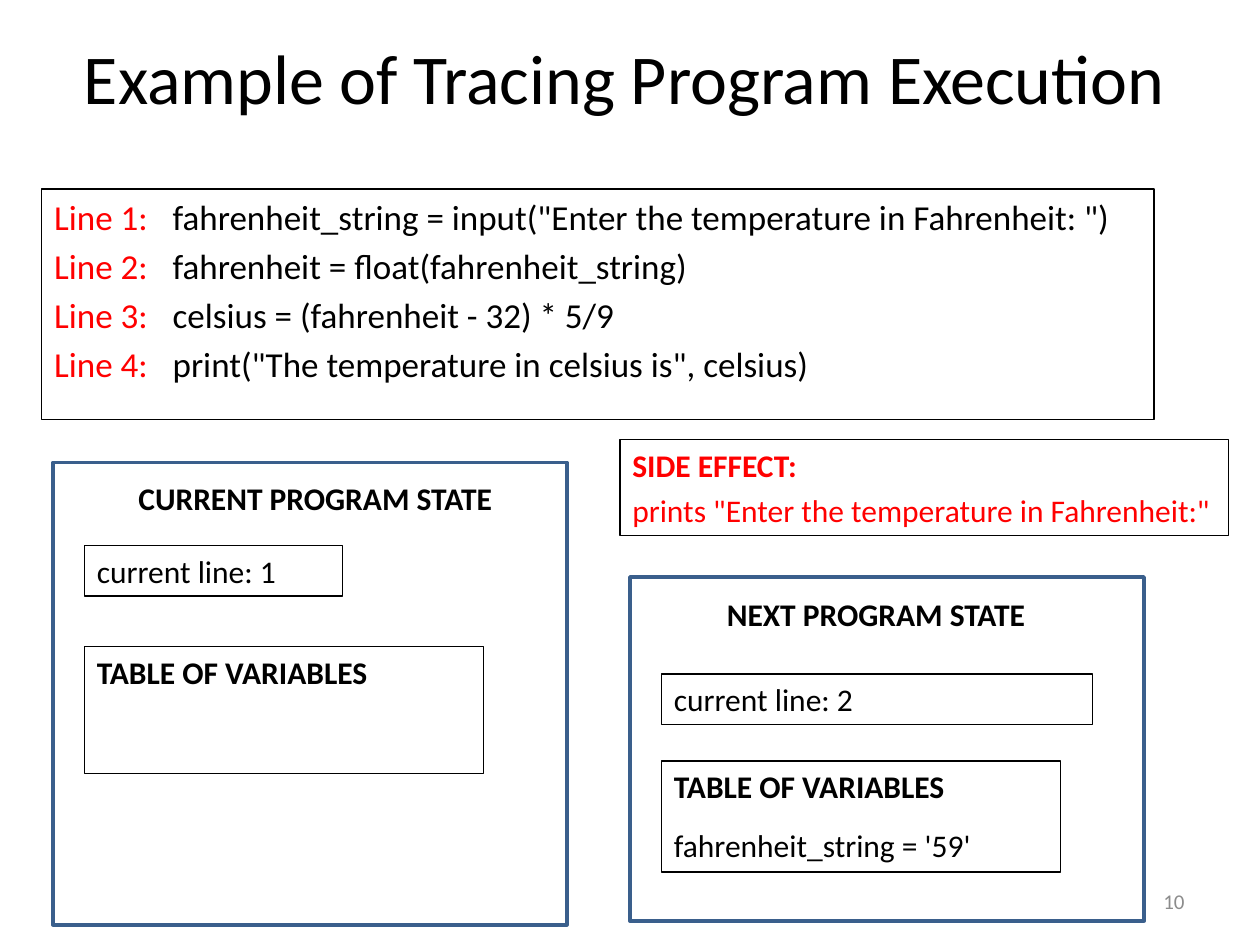
from lxml.etree import SubElement
from pptx import Presentation
from pptx.dml.color import RGBColor
from pptx.enum.shapes import MSO_SHAPE
from pptx.enum.text import MSO_ANCHOR, MSO_AUTO_SIZE, PP_ALIGN
from pptx.oxml.ns import qn
from pptx.util import Inches, Pt

THEME = {
    "font": "Calibri",
    "black": RGBColor(0, 0, 0),
    "red": RGBColor(255, 0, 0),
    "gray": RGBColor(0x8C, 0x8C, 0x8C),
    "frame": RGBColor(0x3A, 0x5F, 0x8C),
    "title": 40, "code": 20, "label": 18, "number": 12,
    "thin": 0.75, "thick": 2,
}

TITLE = ("Example of Tracing Program Execution", (0.08, 0.17, 9.75, 0.88))
SLIDE_NUMBER = ("10", (7.17, 6.95, 2.33, 0.4))
CODE_BOX = (0.33, 1.5, 8.83, 1.83)
CODE_INDENT = 0.94
CODE = [
    'fahrenheit_string = input("Enter the temperature in Fahrenheit: ")',
    "fahrenheit = float(fahrenheit_string)",
    "celsius = (fahrenheit - 32) * 5/9",
    'print("The temperature in celsius is", celsius)',
]
SIDE_EFFECT = {
    "box": (4.92, 3.49, 4.83, 0.76),
    "lines": ["SIDE EFFECT:", 'prints "Enter the temperature in Fahrenheit:"'],
    "gap": 4,
}
STATES = [
    {
        "frame": (0.42, 3.67, 4.08, 3.67),
        "heading": ("CURRENT PROGRAM STATE", (1, 3.75, 3.17, 0.4)),
        "current": ("current line: 1", (0.67, 4.33, 2.05, 0.4)),
        "variables": (["TABLE OF VARIABLES"], (0.67, 5.13, 3.17, 1.01)),
    },
    {
        "frame": (5, 4.58, 4.08, 2.73),
        "heading": ("NEXT PROGRAM STATE", (5.67, 4.67, 3.17, 0.4)),
        "current": ("current line: 2", (5.25, 5.35, 3.42, 0.4)),
        "variables": (["TABLE OF VARIABLES", "fahrenheit_string = '59'"],
                      (5.25, 6.04, 3.17, 0.88)),
    },
]
VARIABLES_GAP = 12


def place(shape, box):
    shape.left, shape.top, shape.width, shape.height = map(Inches, box)


def set_font(font, size, color, bold=False):
    font.name = THEME["font"]
    font.size = Pt(size)
    font.color.rgb = color
    font.bold = bold


def outline(shape, color, width):
    shape.line.color.rgb = color
    shape.line.width = Pt(width)


def add_box(shapes, box, color=THEME["black"], width=THEME["thin"]):
    """Add an unfilled, outlined rectangle."""
    shape = shapes.add_shape(MSO_SHAPE.RECTANGLE, *map(Inches, box))
    shape.shadow.inherit = False
    shape.fill.background()
    outline(shape, color, width)
    return shape


def write(shape, lines, color=THEME["black"], size=THEME["label"], gap=0,
          bold_first=False, align=PP_ALIGN.LEFT, anchor=MSO_ANCHOR.TOP):
    """Write one paragraph per line, with a gap in points between them."""
    frame = shape.text_frame
    frame.word_wrap = True
    frame.auto_size = MSO_AUTO_SIZE.NONE
    frame.vertical_anchor = anchor
    frame.text = "\n".join(lines)
    for index, paragraph in enumerate(frame.paragraphs):
        paragraph.alignment = align
        paragraph.space_before = Pt(gap if index else 0)
        set_font(paragraph.font, size, color, bold_first and index == 0)


def write_code(shape):
    frame = shape.text_frame
    frame.auto_size = MSO_AUTO_SIZE.NONE
    for index, statement in enumerate(CODE):
        paragraph = frame.paragraphs[0] if index == 0 else frame.add_paragraph()
        properties = paragraph._p.get_or_add_pPr()
        properties.set("marL", str(Inches(CODE_INDENT)))
        properties.set("indent", str(-Inches(CODE_INDENT)))
        SubElement(properties, qn("a:buNone"))
        for text, color in ((f"Line {index + 1}:\t", THEME["red"]),
                            (statement, THEME["black"])):
            run = paragraph.add_run()
            run.text = text
            set_font(run.font, THEME["code"], color)


def add_state(slide, state):
    shapes = slide.shapes.add_group_shape().shapes
    add_box(shapes, state["frame"], THEME["frame"], THEME["thick"])
    lines, box = state["variables"]
    write(add_box(shapes, box), lines, gap=VARIABLES_GAP, bold_first=True)
    text, box = state["current"]
    write(add_box(shapes, box), [text])
    text, box = state["heading"]
    write(shapes.add_textbox(*map(Inches, box)), [text], bold_first=True)


def main():
    presentation = Presentation()
    presentation.slide_width, presentation.slide_height = Inches(10), Inches(7.5)
    slide = presentation.slides.add_slide(presentation.slide_layouts[1])

    text, box = TITLE
    title = slide.shapes.title
    place(title, box)
    write(title, [text], size=THEME["title"], align=PP_ALIGN.CENTER,
          anchor=MSO_ANCHOR.MIDDLE)

    text, box = SLIDE_NUMBER
    write(slide.shapes.add_textbox(*map(Inches, box)), [text], THEME["gray"],
          THEME["number"], align=PP_ALIGN.RIGHT, anchor=MSO_ANCHOR.MIDDLE)

    code = slide.placeholders[1]
    place(code, CODE_BOX)
    outline(code, THEME["black"], THEME["thin"])
    write_code(code)

    add_state(slide, STATES[0])
    write(add_box(slide.shapes, SIDE_EFFECT["box"]), SIDE_EFFECT["lines"],
          THEME["red"], gap=SIDE_EFFECT["gap"], bold_first=True)
    add_state(slide, STATES[1])

    presentation.save("out.pptx")


if __name__ == "__main__":
    main()
